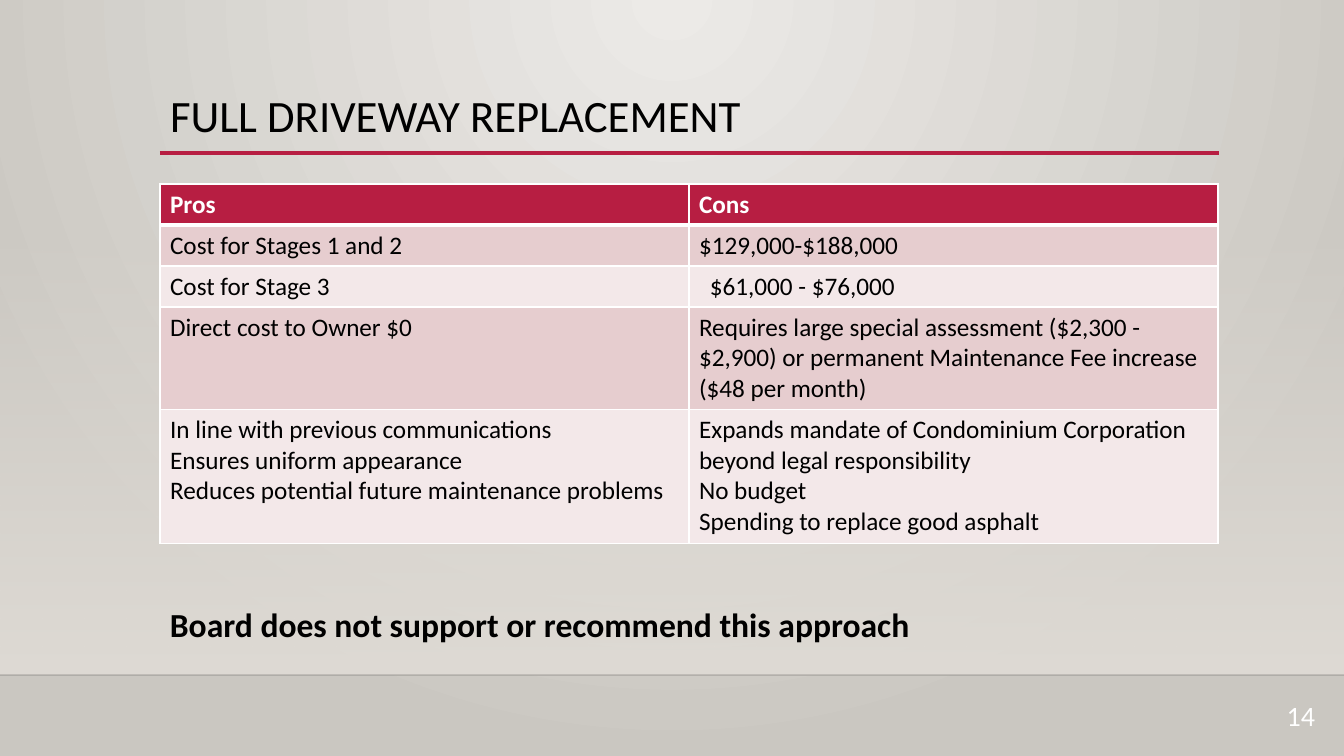
from pptx import Presentation
from pptx.dml.color import RGBColor
from pptx.enum.shapes import MSO_CONNECTOR, MSO_SHAPE
from pptx.enum.text import MSO_ANCHOR, MSO_AUTO_SIZE, PP_ALIGN
from pptx.oxml import parse_xml
from pptx.oxml.ns import nsdecls, qn
from pptx.util import Pt

STRAIGHT, RECTANGLE = MSO_CONNECTOR.STRAIGHT, MSO_SHAPE.RECTANGLE
TOP, LEFT, RIGHT = MSO_ANCHOR.TOP, PP_ALIGN.LEFT, PP_ALIGN.RIGHT

EMU_PER_PX = 914400 / 100.8
WIDTH, HEIGHT = 1344, 756
TITLE_ONLY = 5
CRIMSON, WHITE, BLACK = "B71E42", "FFFFFF", "000000"
BANDS = ("E6CDCF", "F3E8E9")

ROWS = [
    ("Pros", "Cons"),
    ("Cost for Stages 1 and 2", "$129,000-$188,000"),
    ("Cost for Stage 3", "$61,000 - $76,000"),
    ("Direct cost to Owner $0",
     "Requires large special assessment ($2,300 - $2,900) or permanent "
     "Maintenance Fee increase ($48 per month)"),
    ("In line with previous communications\nEnsures uniform appearance\n"
     "Reduces potential future maintenance problems",
     "Expands mandate of Condominium Corporation beyond legal responsibility\n"
     "No budget\nSpending to replace good asphalt"),
]
ROW_HEIGHTS = (41, 41, 41, 102, 134)


def px(length):
    return round(length * EMU_PER_PX)


def color(hex_string):
    return RGBColor.from_string(hex_string)


def write(frame, text, size, hex_string, bold=False, align=LEFT):
    frame.text = text
    frame.word_wrap = True
    font_format = {"name": "Calibri", "size": Pt(size), "bold": bold}
    for para in frame.paragraphs:
        para.alignment = align
        for span in para.runs:
            for name, value in font_format.items():
                setattr(span.font, name, value)
            span.font.color.rgb = color(hex_string)


def apply_gradient(owner, fill, stops, direction):
    """Stops are (position %, colour, opacity %); direction is lin or path XML."""
    fill.gradient()
    stop_xml = "".join(
        f'<a:gs pos="{position * 1000}"><a:srgbClr val="{hex_string}">'
        f'<a:alpha val="{opacity * 1000}"/></a:srgbClr></a:gs>'
        for position, hex_string, opacity in stops)
    gradient = parse_xml(
        f'<a:gradFill {nsdecls("a")} rotWithShape="1">'
        f'<a:gsLst>{stop_xml}</a:gsLst>{direction}</a:gradFill>')
    default = owner.find(".//" + qn("a:gradFill"))
    default.getparent().replace(default, gradient)


def add_backdrop(page):
    apply_gradient(
        page.element, page.background.fill,
        [(0, "ECEAE7", 100), (100, "CAC7C1", 100)],
        '<a:path path="circle"><a:fillToRect l="43000" t="0" r="43000" '
        'b="100000"/></a:path>')
    panel = page.shapes.add_shape(RECTANGLE, 0, px(223), px(WIDTH), px(452))
    panel.shadow.inherit = False
    panel.line.fill.background()
    apply_gradient(
        panel.element, panel.fill,
        [(0, "DFDBD5", 0), (100, "DFDBD5", 100)],
        '<a:lin ang="5400000" scaled="0"/>')


def add_rule(page, left, right, y, hex_string, weight, opacity=100):
    rule = page.shapes.add_connector(STRAIGHT, px(left), px(y), px(right), px(y))
    rule.line.color.rgb = color(hex_string)
    rule.line.width = Pt(weight)
    rule.element.spPr.append(parse_xml(f'<a:effectLst {nsdecls("a")}/>'))
    if opacity < 100:
        rule.element.find(".//" + qn("a:srgbClr")).append(
            parse_xml(f'<a:alpha {nsdecls("a")} val="{opacity * 1000}"/>'))


def set_title(page, text):
    title = page.shapes.title
    placement = {"left": 160, "top": 89, "width": 1058, "height": 84}
    for name, value in placement.items():
        setattr(title, name, px(value))
    frame = title.text_frame
    write(frame, text, 32, BLACK)
    frame.auto_size = MSO_AUTO_SIZE.NONE
    frame.vertical_anchor = TOP
    frame.paragraphs[0].line_spacing = 0.9


def set_borders(cell, widths):
    """Widths are points for the left, right, top and bottom sides."""
    properties = cell._tc.get_or_add_tcPr()
    for index, (side, width) in enumerate(zip("LRTB", widths)):
        properties.insert(index, parse_xml(
            f'<a:ln{side} {nsdecls("a")} w="{Pt(width)}"><a:solidFill>'
            f'<a:srgbClr val="{WHITE}"/></a:solidFill></a:ln{side}>'))


def add_comparison(page):
    table = page.shapes.add_table(
        len(ROWS), 2, px(160), px(184), px(1058), px(sum(ROW_HEIGHTS))).table
    for row_index, texts in enumerate(ROWS):
        table.rows[row_index].height = px(ROW_HEIGHTS[row_index])
        header = row_index == 0
        top, bottom = (3 if row_index == 1 else 1), (3 if header else 1)
        for column_index, text in enumerate(texts):
            cell = table.cell(row_index, column_index)
            write(cell.text_frame, text, 18, WHITE if header else BLACK, header)
            cell.fill.solid()
            cell.fill.fore_color.rgb = color(
                CRIMSON if header else BANDS[(row_index - 1) % 2])
            set_borders(cell, (1, 1, top, bottom))
    table.cell(2, 1).margin_left = px(21)


def add_text(page, left, top, width, text, size, hex_string, **style):
    box = page.shapes.add_textbox(px(left), px(top), px(width), px(50))
    write(box.text_frame, text, size, hex_string, **style)


def main():
    deck = Presentation()
    deck.slide_width, deck.slide_height = px(WIDTH), px(HEIGHT)
    page = deck.slides.add_slide(deck.slide_layouts[TITLE_ONLY])
    add_backdrop(page)
    add_rule(page, 0, WIDTH, 675, "000001", 1, opacity=20)
    add_rule(page, 160, 1219, 153, CRIMSON, 2.5)
    set_title(page, "FULL DRIVEWAY REPLACEMENT")
    add_comparison(page)
    add_text(page, 1250, 694, 75, "14", 20, WHITE, align=RIGHT)
    add_text(page, 160, 599, 1066,
             "Board does not support or recommend this approach",
             24, BLACK, bold=True)
    deck.save("out.pptx")


if __name__ == "__main__":
    main()
